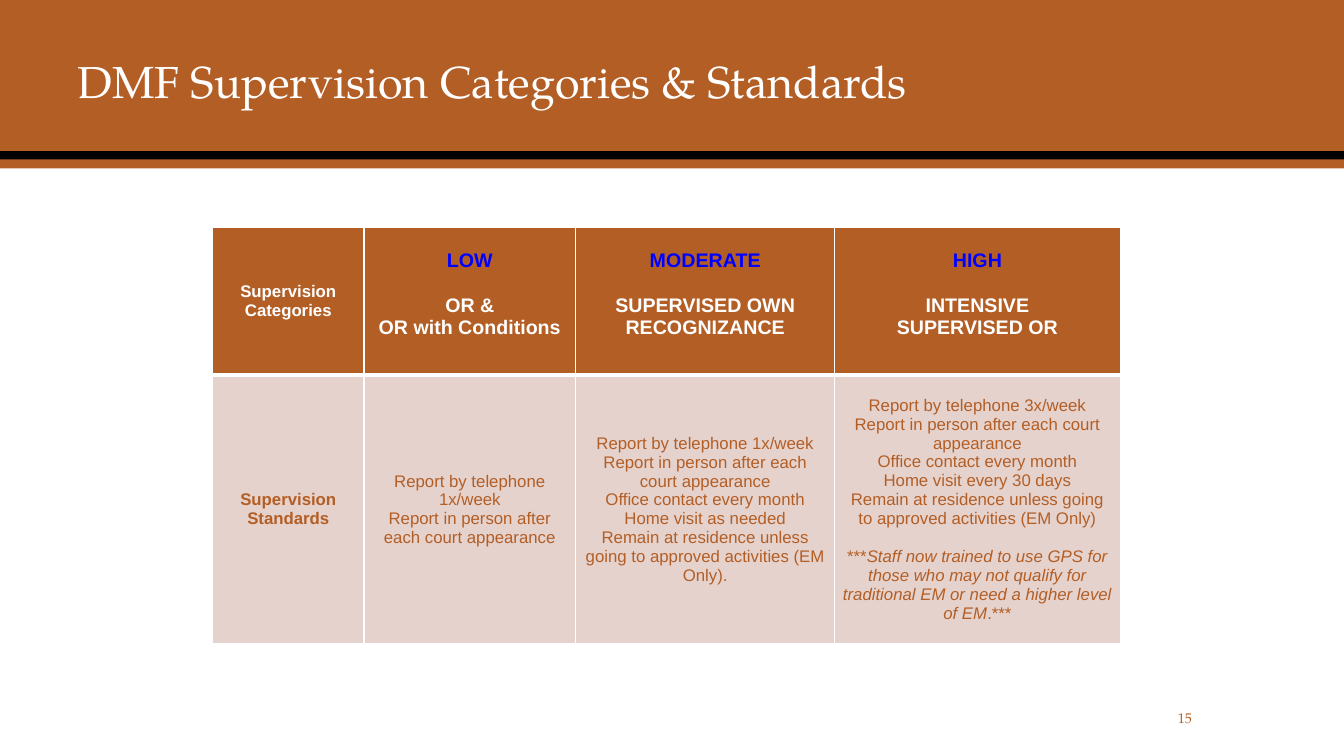
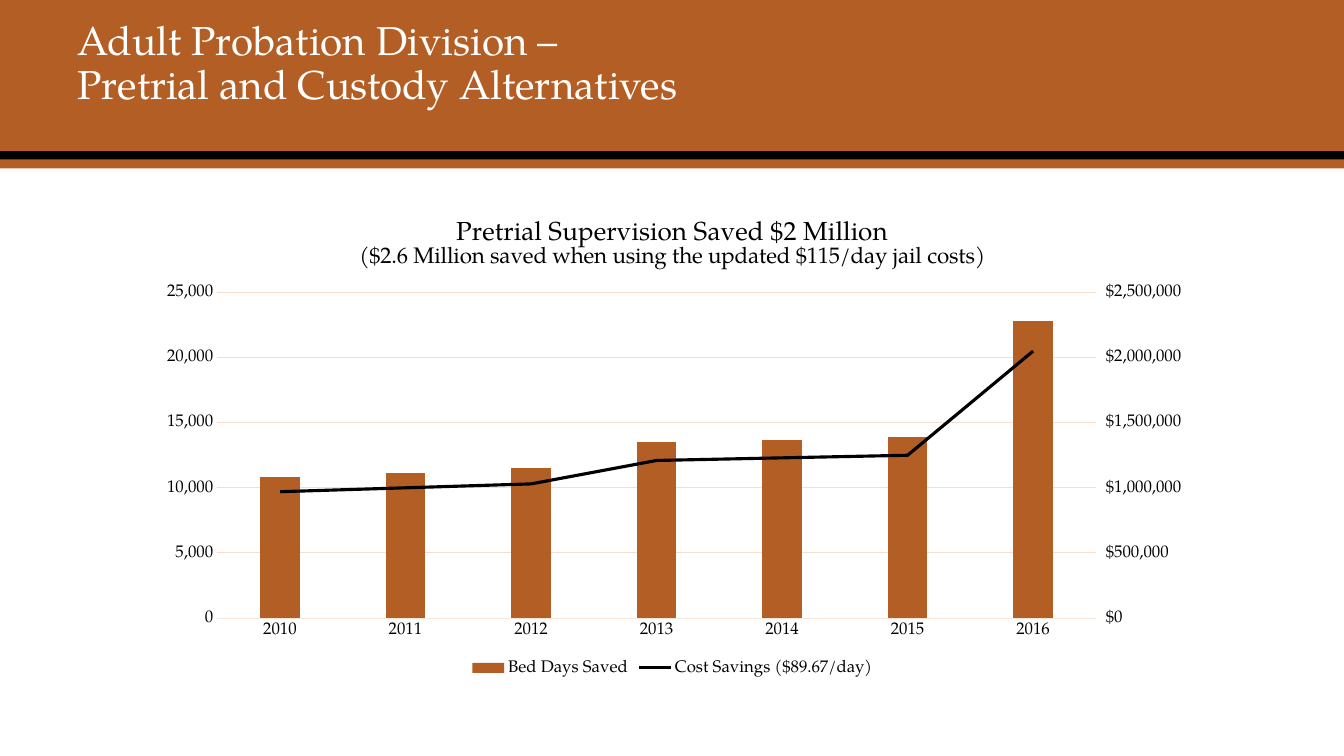
from copy import deepcopy

from pptx import Presentation
from pptx.chart.axis import ValueAxis
from pptx.chart.data import CategoryChartData
from pptx.dml.color import RGBColor
from pptx.enum.chart import XL_CHART_TYPE, XL_LEGEND_POSITION, XL_MARKER_STYLE, XL_TICK_MARK
from pptx.enum.shapes import MSO_SHAPE
from pptx.enum.text import MSO_ANCHOR, PP_ALIGN
from pptx.oxml import parse_xml
from pptx.oxml.ns import nsdecls, qn
from pptx.util import Inches, Pt

RECTANGLE = MSO_SHAPE.RECTANGLE
LEFT, CENTER, RIGHT = PP_ALIGN.LEFT, PP_ALIGN.CENTER, PP_ALIGN.RIGHT
TOP, MIDDLE, BOTTOM = MSO_ANCHOR.TOP, MSO_ANCHOR.MIDDLE, MSO_ANCHOR.BOTTOM
NO_TICK, OUTSIDE_TICK = XL_TICK_MARK.NONE, XL_TICK_MARK.OUTSIDE
COLUMNS, LEGEND_BOTTOM = XL_CHART_TYPE.COLUMN_CLUSTERED, XL_LEGEND_POSITION.BOTTOM
NO_MARKER = XL_MARKER_STYLE.NONE

# Theme: colours and text formats
SERIF, SANS = "TeX Gyre Pagella", "Arial"
COLORS = {
    "rust": "B35E25", "black": "000000", "white": "FFFFFF", "blue": "0000FF",
    "blush": "E5D2CD", "grid": "F5DECE", "axis": "F7E6DA",
}
THEME = {name: RGBColor.from_string(value) for name, value in COLORS.items()}
FORMATS = {
    "title": {"name": SERIF, "size": Pt(32), "color": "white"},
    "long title": {"name": SERIF, "size": Pt(28.8), "color": "white"},
    "page": {"name": SERIF, "size": Pt(10), "color": "rust"},
    "corner": {"name": SANS, "size": Pt(12), "bold": True, "color": "white"},
    "level": {"name": SANS, "size": Pt(14), "bold": True, "color": "blue"},
    "header": {"name": SANS, "size": Pt(14), "bold": True, "color": "white"},
    "row label": {"name": SANS, "size": Pt(12), "bold": True, "color": "rust"},
    "body": {"name": SANS, "size": Pt(12), "bold": False, "color": "rust"},
    "note": {"name": SANS, "size": Pt(12), "bold": False, "italic": True, "color": "rust"},
    "chart title": {"name": SERIF, "size": Pt(18.6), "bold": False, "color": "black"},
    "chart subtitle": {"name": SERIF, "size": Pt(16), "bold": False, "color": "black"},
    "chart": {"name": SERIF, "size": Pt(12), "color": "black"},
}


def set_font(font, format_name):
    for attribute, value in FORMATS[format_name].items():
        if attribute == "color":
            font.color.rgb = THEME[value]
        else:
            setattr(font, attribute, value)


def write_paragraphs(text_frame, paragraphs, **settings):
    """Write paragraphs, each a list of (text, format name) runs."""
    for index, runs in enumerate(paragraphs):
        paragraph = text_frame.add_paragraph() if index else text_frame.paragraphs[0]
        for attribute, value in settings.items():
            setattr(paragraph, attribute, value)
        for text, format_name in runs:
            run = paragraph.add_run()
            run.text = text
            set_font(run.font, format_name)


presentation = Presentation()
presentation.slide_width, presentation.slide_height = Inches(13.33), Inches(7.5)
blank_layout = presentation.slide_layouts[6]

# Both slides: bands and title
BANDS = [(0, 1.5, "rust"), (1.5, 0.09, "black"), (1.58, 0.09, "rust")]
TITLES = [
    ("title", ["DMF Supervision Categories & Standards"]),
    ("long title", ["Adult Probation Division –", "Pretrial and Custody Alternatives"]),
]
for format_name, lines in TITLES:
    slide = presentation.slides.add_slide(blank_layout)
    for top, height, color in BANDS:
        band = slide.shapes.add_shape(
            RECTANGLE, 0, Inches(top), presentation.slide_width, Inches(height))
        band.shadow.inherit = False
        band.fill.solid()
        band.fill.fore_color.rgb = THEME[color]
        band.line.fill.background()
    title = slide.shapes.add_textbox(Inches(0.67), Inches(0.37), Inches(10.5), Inches(0.75))
    title.text_frame.word_wrap = True
    title.text_frame.vertical_anchor = BOTTOM
    write_paragraphs(title.text_frame, [[(line, format_name)] for line in lines],
                     alignment=LEFT, line_spacing=0.9)
table_slide, chart_slide = presentation.slides

# Supervision table
HEADERS = [
    ("LOW", ["OR &", "OR with Conditions"]),
    ("MODERATE", ["SUPERVISED OWN RECOGNIZANCE"]),
    ("HIGH", ["INTENSIVE", "SUPERVISED OR"]),
]
IN_PERSON = "Report in person after each court appearance"
OFFICE = "Office contact every month"
RESIDENCE = "Remain at residence unless going to approved activities (EM Only)"
STANDARDS = [
    ["Report by telephone 1x/week", IN_PERSON],
    ["Report by telephone 1x/week", IN_PERSON, OFFICE, "Home visit as needed", RESIDENCE + "."],
    ["Report by telephone 3x/week", IN_PERSON, OFFICE, "Home visit every 30 days", RESIDENCE],
]
GPS_NOTE = [
    ("***", "body"),
    ("Staff now trained to use GPS for those who may not qualify for "
     "traditional EM or need a higher level of EM", "note"),
    (".***", "body"),
]
header_row = [[[("Supervision Categories", "corner")]]]
for level, lines in HEADERS:
    header_row.append([[(level, "level")]] + [[(line, "header")] for line in lines])
standards_row = [[[("Supervision", "row label")], [("Standards", "row label")]]]
for lines in STANDARDS:
    standards_row.append([[(line, "body")] for line in lines])
standards_row[-1].append(GPS_NOTE)

table = table_slide.shapes.add_table(
    2, 4, Inches(2.11), Inches(2.26), Inches(9), Inches(4.13)).table
table.horz_banding = False
for column, width in zip(table.columns, [1.5, 2.1, 2.57, 2.83]):
    column.width = Inches(width)
for row, height in zip(table.rows, [1.46, 2.67]):
    row.height = Inches(height)

ROW_STYLES = [
    ("rust", {"lnL": 1, "lnR": 1, "lnT": 1, "lnB": 3}),
    ("blush", {"lnL": 1, "lnR": 1, "lnT": 3, "lnB": 1}),
]
for row_index, contents in enumerate([header_row, standards_row]):
    fill_color, borders = ROW_STYLES[row_index]
    for column_index, paragraphs in enumerate(contents):
        cell = table.cell(row_index, column_index)
        level_cell = row_index == 0 and column_index > 0
        cell.margin_left = cell.margin_right = Inches(0.07)
        cell.margin_top = Inches(0.22 if level_cell else 0)
        cell.margin_bottom = 0
        cell.vertical_anchor = TOP if level_cell else MIDDLE
        cell.fill.solid()
        cell.fill.fore_color.rgb = THEME[fill_color]
        write_paragraphs(cell.text_frame, paragraphs, alignment=CENTER)
        if level_cell:
            cell.text_frame.paragraphs[1].space_before = Pt(16)
        properties = cell._tc.get_or_add_tcPr()
        for position, (side, width) in enumerate(borders.items()):
            properties.insert(position, parse_xml(
                f'<a:{side} {nsdecls("a")} w="{Pt(width)}"><a:solidFill>'
                f'<a:srgbClr val="{COLORS["white"]}"/></a:solidFill></a:{side}>'))
table.cell(1, 3).text_frame.paragraphs[-1].space_before = Pt(14)

# Page number
page_number = table_slide.shapes.add_textbox(
    Inches(10.42), Inches(6.97), Inches(1.5), Inches(0.3))
page_number.text_frame.word_wrap = True
page_number.text_frame.vertical_anchor = MIDDLE
write_paragraphs(page_number.text_frame, [[("15", "page")]], alignment=RIGHT)

# Chart data, starting with both series as columns
DOLLARS = '"$"#,##0'
chart_data = CategoryChartData()
chart_data.categories = [str(year) for year in range(2010, 2017)]
chart_data.add_series(
    "Bed Days Saved", [10800, 11100, 11500, 13500, 13700, 13900, 22800], "#,##0")
chart_data.add_series(
    "Cost Savings ($89.67/day)",
    [970000, 1000000, 1030000, 1210000, 1230000, 1250000, 2050000], DOLLARS)
chart = chart_slide.shapes.add_chart(
    COLUMNS, Inches(1.42), Inches(2), Inches(10.5), Inches(4.75), chart_data).chart
set_font(chart.font, "chart")

# Chart title and legend
chart.has_title = True
chart.chart_title.include_in_layout = False
write_paragraphs(chart.chart_title.text_frame, [
    [("Pretrial Supervision Saved $2 Million", "chart title")],
    [("($2.6 Million saved when using the updated $115/day jail costs)", "chart subtitle")],
])
chart.has_legend = True
chart.legend.position = LEGEND_BOTTOM
chart.legend.include_in_layout = False
set_font(chart.legend.font, "chart")

# Left and bottom axes
category_axis, left_axis = chart.category_axis, chart.value_axis
for axis in (category_axis, left_axis):
    axis.major_tick_mark = axis.minor_tick_mark = NO_TICK
    set_font(axis.tick_labels.font, "chart")
category_axis.format.line.color.rgb = THEME["axis"]
category_axis.format.line.width = Pt(0.75)
left_axis.format.line.fill.background()
left_axis.has_major_gridlines = True
left_axis.major_gridlines.format.line.color.rgb = THEME["grid"]
left_axis.major_gridlines.format.line.width = Pt(0.75)

# Right axis and its hidden category axis
RIGHT_IDS = {"category": "50010", "value": "50020"}
plot_area = category_axis._element.getparent()
right_value = deepcopy(left_axis._element)
right_category = deepcopy(category_axis._element)
for element, own, other in [(right_value, "value", "category"),
                            (right_category, "category", "value")]:
    element.find(qn("c:axId")).set("val", RIGHT_IDS[own])
    element.find(qn("c:crossAx")).set("val", RIGHT_IDS[other])
    plot_area.append(element)
right_category.find(qn("c:delete")).set("val", "1")
right_value.find(qn("c:axPos")).set("val", "r")
right_value.find(qn("c:crosses")).set("val", "max")
right_axis = ValueAxis(right_value)
right_axis.has_major_gridlines = False
right_axis.major_tick_mark = OUTSIDE_TICK
for axis, maximum, number_format in [(left_axis, 25000, "#,##0"),
                                     (right_axis, 2500000, DOLLARS)]:
    axis.minimum_scale, axis.maximum_scale, axis.major_unit = 0, maximum, maximum / 5
    axis.tick_labels.number_format = number_format
    axis.tick_labels.number_format_is_linked = False

# Move the cost series to a line plot on the right axis
column_element = chart.plots[0]._element
cost_element = column_element.findall(qn("c:ser"))[1]
for column_setting in cost_element.findall(qn("c:invertIfNegative")):
    cost_element.remove(column_setting)
line_element = parse_xml(
    f'<c:lineChart {nsdecls("c")}><c:grouping val="standard"/><c:varyColors val="0"/>'
    f'<c:marker val="1"/><c:axId val="{RIGHT_IDS["category"]}"/>'
    f'<c:axId val="{RIGHT_IDS["value"]}"/></c:lineChart>')
line_element.insert(2, cost_element)
column_element.addnext(line_element)

# Series colours
column_plot, line_plot = chart.plots
column_plot.vary_by_categories = False
column_plot.gap_width = 219
bed_days, cost_savings = column_plot.series[0], line_plot.series[0]
bed_days.format.fill.solid()
bed_days.format.fill.fore_color.rgb = THEME["rust"]
cost_savings.format.line.color.rgb = THEME["black"]
cost_savings.format.line.width = Pt(2.25)
cost_savings.marker.style = NO_MARKER
cost_savings.smooth = False

# Plot position as fractions of the chart
PLOT = {"x": 0.07, "y": 0.19, "w": 0.83, "h": 0.68}
for layout in plot_area.findall(qn("c:layout")):
    plot_area.remove(layout)
plot_area.insert(0, parse_xml(
    f'<c:layout {nsdecls("c")}><c:manualLayout><c:layoutTarget val="inner"/>'
    '<c:xMode val="edge"/><c:yMode val="edge"/>'
    + "".join(f'<c:{name} val="{value}"/>' for name, value in PLOT.items())
    + "</c:manualLayout></c:layout>"))

presentation.save("out.pptx")
